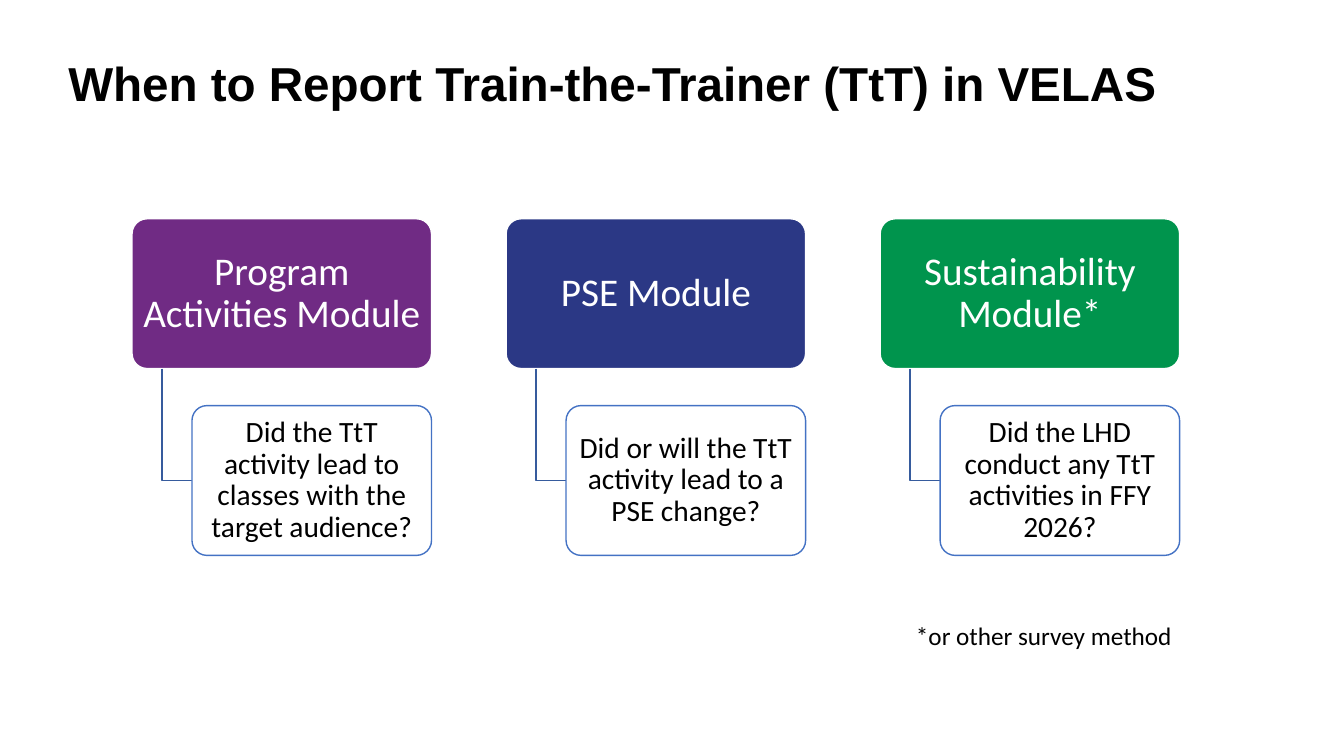
from pptx import Presentation
from pptx.dml.color import RGBColor
from pptx.enum.shapes import MSO_SHAPE
from pptx.enum.text import MSO_ANCHOR, PP_ALIGN
from pptx.util import Inches, Pt

HUES = {"purple": "702B84", "navy": "2B3885", "green": "00944D",
        "white": "FFFFFF", "black": "000000", "edge": "4472C4", "link": "365B9D"}
MODULES = [
    ("Program Activities Module", "purple",
     "Did the TtT activity lead to classes with the target audience?"),
    ("PSE Module", "navy", "Did or will the TtT activity lead to a PSE change?"),
    ("Sustainability Module*", "green",
     "Did the LHD conduct any TtT activities in FFY 2026?"),
]
LEFT, TOP, PITCH = 1.31, 2.17, 3.71
WIDE, HIGH = 2.97, 3.34


def tint(name):
    return RGBColor.from_string(HUES[name])


def write(shape, text, size, color="black", font="Calibri", bold=False,
          align=PP_ALIGN.CENTER, anchor=MSO_ANCHOR.MIDDLE, lines=0.9, inset=(0.1, 0.05)):
    frame = shape.text_frame
    frame.word_wrap = True
    frame.vertical_anchor = anchor
    frame.margin_left = frame.margin_right = Inches(inset[0])
    frame.margin_top = frame.margin_bottom = Inches(inset[1])
    para = frame.paragraphs[0]
    para.alignment = align
    para.line_spacing = lines
    run = para.add_run()
    run.text = text
    run.font.size = Pt(size)
    run.font.name = font
    run.font.bold = bold
    run.font.color.rgb = tint(color)


def label(slide, box, text, size, **style):
    shape = slide.shapes.add_textbox(*map(Inches, box))
    write(shape, text, size, **style)


def card(slide, box, text, size, fill, edge, **style):
    shape = slide.shapes.add_shape(MSO_SHAPE.ROUNDED_RECTANGLE, *map(Inches, box))
    shape.adjustments[0] = 0.1
    shape.shadow.inherit = False
    shape.fill.solid()
    shape.fill.fore_color.rgb = tint(fill)
    shape.line.color.rgb = tint(edge)
    shape.line.width = Pt(1)
    write(shape, text, size, **style)


def elbow(slide, left, top, right, low):
    pen = slide.shapes.build_freeform(Inches(left), Inches(top))
    pen.add_line_segments([(Inches(left), Inches(low)), (Inches(right), Inches(low))],
                          close=False)
    shape = pen.convert_to_shape()
    shape.shadow.inherit = False
    shape.fill.background()
    shape.line.color.rgb = tint("link")
    shape.line.width = Pt(1)


def module(slide, box, name, hue, question):
    left, top, wide, high = box
    tall = high * 0.445
    step = wide * 0.1
    low = top + high - tall
    card(slide, (left, top, wide, tall), name, 28, hue, "white",
         color="white", inset=(0.05, 0.04))
    elbow(slide, left + step, top + tall, left + 2 * step, low + tall / 2)
    card(slide, (left + 2 * step, low, wide - 2 * step, tall), question, 21,
         "white", "edge", inset=(0.04, 0.03))


def main():
    deck = Presentation()
    deck.slide_width, deck.slide_height = Inches(13.33), Inches(7.5)
    slide = deck.slides.add_slide(deck.slide_layouts[6])
    label(slide, (0.58, 0.34, 11.5, 1.03), "When to Report Train-the-Trainer (TtT) in VELAS",
          34, font="Arial", bold=True, align=PP_ALIGN.LEFT)
    for col, part in enumerate(MODULES):
        module(slide, (LEFT + col * PITCH, TOP, WIDE, HIGH), *part)
    label(slide, (8.61, 6.1, 3.11, 0.4), "*or other survey method", 18,
          align=PP_ALIGN.RIGHT, anchor=MSO_ANCHOR.TOP, lines=1.0)
    deck.save("out.pptx")


if __name__ == "__main__":
    main()
